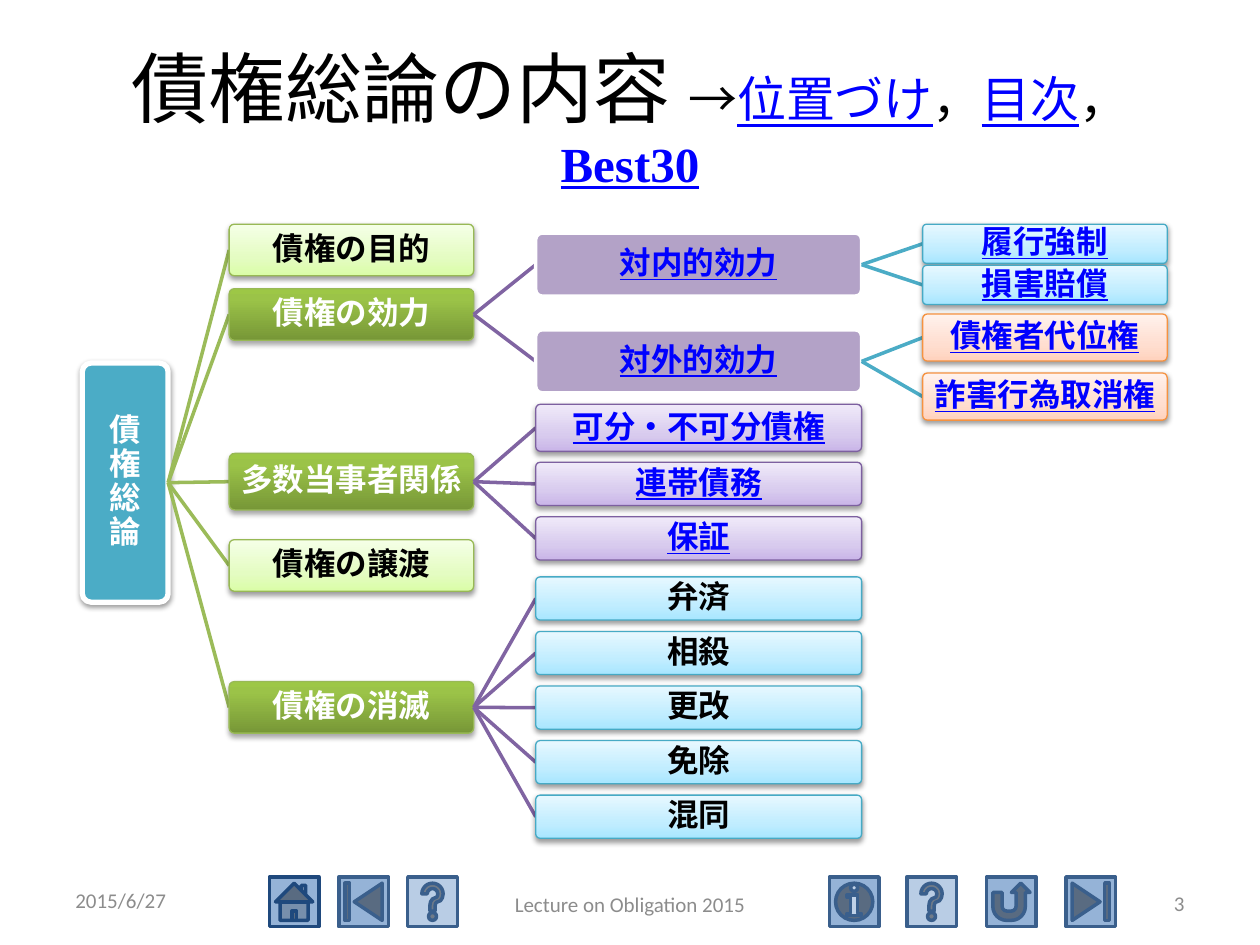
from copy import deepcopy
from dataclasses import dataclass
from typing import Optional

from lxml.etree import SubElement
from pptx import Presentation
from pptx.dml.color import RGBColor
from pptx.enum.shapes import MSO_CONNECTOR, MSO_SHAPE
from pptx.enum.text import MSO_ANCHOR, PP_ALIGN
from pptx.oxml.ns import qn
from pptx.util import Cm, Pt

COLORS = {
    "black": "000000", "white": "FFFFFF", "link": "0000FF", "footer": "8C8C8C",
    "teal": "4BACC6", "green": "9BBB59", "purple": "8064A2", "lilac": "B3A2C7",
    "green edge": "98B955", "blue edge": "46AAC5",
    "orange edge": "F69240", "purple edge": "7D60A0",
    "button": "95B3D7", "help": "B9CDE5", "button edge": "3A5F8C", "home edge": "1F497D",
}


@dataclass(frozen=True)
class Style:
    fill: str | tuple[tuple[float, str], ...]
    edge: str
    edge_width: float = 0.75
    text: str = "link"
    shadow: Optional[tuple[int, float]] = (38, 1.6)


@dataclass(frozen=True)
class Column:
    left: float
    width: float
    branch: str


@dataclass(frozen=True)
class Node:
    label: str
    style: Style
    top: float
    height: float
    children: tuple["Node", ...] = ()


@dataclass(frozen=True)
class Button:
    kind: MSO_SHAPE
    left: float
    fill: str = "button"
    edge: str = "button edge"


@dataclass(frozen=True)
class Footer:
    text: str
    left: float
    top: float
    width: float
    align: PP_ALIGN


@dataclass(frozen=True)
class TitlePart:
    text: str
    size: int = 28
    linked: bool = False
    font: str = "Calibri"
    bold: bool = False


PALE_GREEN = ((0, "DAFDA7"), (0.35, "E4FCC2"), (1, "F5FFE7"))
DEEP_GREEN = ((0, "779737"), (0.8, "9BC348"), (1, "9DC746"))
PALE_BLUE = ((0, "A7E6FF"), (0.35, "C1EDFF"), (1, "E7F8FF"))
PALE_ORANGE = ((0, "FFD2BD"), (0.35, "FFDED0"), (1, "FFF2ED"))
PALE_PURPLE = ((0, "C9B5E8"), (0.35, "D8CBEE"), (1, "F0EAF9"))

ROOT = Style("teal", "white", 3, "white")
TOPIC = Style(PALE_GREEN, "green edge", text="black")
BRANCH = Style(DEEP_GREEN, "green edge", text="white", shadow=(35, 1.8))
EFFECT = Style("lilac", "white", 2, shadow=None)
INTERNAL = Style(PALE_BLUE, "blue edge")
EXTERNAL = Style(PALE_ORANGE, "orange edge")
PARTIES = Style(PALE_PURPLE, "purple edge")
EXTINCTION = Style(PALE_BLUE, "blue edge", text="black")

COLUMNS = (
    Column(1.66, 1.73, "green"),
    Column(4.62, 4.93, "purple"),
    Column(10.8, 6.57, "teal"),
    Column(18.6, 4.93, "teal"),
)

TREE = Node("債\v権\v総\v論", ROOT, 7.32, 4.82, (
    Node("債権の目的", TOPIC, 4.52, 1.04),
    Node("債権の効力", BRANCH, 5.82, 1.04, (
        Node("対内的効力", EFFECT, 4.7, 1.27, (
            Node("履行強制", INTERNAL, 4.52, 0.79),
            Node("損害賠償", INTERNAL, 5.35, 0.79),
        )),
        Node("対外的効力", EFFECT, 6.65, 1.27, (
            Node("債権者代位権", EXTERNAL, 6.33, 0.95),
            Node("詐害行為取消権", EXTERNAL, 7.52, 0.95),
        )),
    )),
    Node("多数当事者関係", BRANCH, 9.14, 1.14, (
        Node("可分・不可分債権", PARTIES, 8.15, 0.95),
        Node("連帯債務", PARTIES, 9.32, 0.87),
        Node("保証", PARTIES, 10.42, 0.87),
    )),
    Node("債権の譲渡", TOPIC, 10.88, 1.04),
    Node("債権の消滅", BRANCH, 13.74, 1.04, tuple(
        Node(label, EXTINCTION, 11.63 + index * 1.1, 0.87)
        for index, label in enumerate(("弁済", "相殺", "更改", "免除", "混同"))
    )),
))

BUTTONS = (
    Button(MSO_SHAPE.ACTION_BUTTON_HOME, 5.43, edge="home edge"),
    Button(MSO_SHAPE.ACTION_BUTTON_BEGINNING, 6.83),
    Button(MSO_SHAPE.ACTION_BUTTON_HELP, 8.22, "help"),
    Button(MSO_SHAPE.ACTION_BUTTON_INFORMATION, 16.72),
    Button(MSO_SHAPE.ACTION_BUTTON_HELP, 18.28, "help"),
    Button(MSO_SHAPE.ACTION_BUTTON_RETURN, 19.89),
    Button(MSO_SHAPE.ACTION_BUTTON_END, 21.49),
)

FOOTERS = (
    Footer("2015/6/27", 1.27, 17.65, 5.93, PP_ALIGN.LEFT),
    Footer("Lecture on Obligation 2015", 8.68, 17.73, 8.04, PP_ALIGN.CENTER),
    Footer("3", 18.2, 17.71, 5.93, PP_ALIGN.RIGHT),
)

TITLE = (
    TitlePart("債権総論の内容 ", 44),
    TitlePart("→"),
    TitlePart("位置づけ", linked=True),
    TitlePart("，"),
    TitlePart("目次", linked=True),
    TitlePart("， "),
    TitlePart("Best30", linked=True, font="Times New Roman", bold=True),
)


def color(name: str) -> RGBColor:
    return RGBColor.from_string(COLORS[name])


def fill_shape(shape, fill: str | tuple[tuple[float, str], ...]) -> None:
    if isinstance(fill, str):
        shape.fill.solid()
        shape.fill.fore_color.rgb = color(fill)
        return
    shape.fill.gradient()
    shape.fill.gradient_angle = 90
    stop_list = shape._element.spPr.find(".//" + qn("a:gsLst"))
    stop_list.append(deepcopy(stop_list[-1]))
    for stop, (position, value) in zip(shape.fill.gradient_stops, fill):
        stop.position = position
        stop.color.rgb = RGBColor.from_string(value)


def add_shadow(shape, opacity: int, distance: float) -> None:
    effects = shape._element.spPr.find(qn("a:effectLst"))
    shadow = SubElement(effects, qn("a:outerShdw"), blurRad=str(Pt(3.1)),
                        dist=str(Pt(distance)), dir="5400000", rotWithShape="0")
    shade = SubElement(shadow, qn("a:srgbClr"), val=COLORS["black"])
    SubElement(shade, qn("a:alpha"), val=str(opacity * 1000))


def add_box(slide, kind: MSO_SHAPE, left: float, top: float, width: float, height: float,
            fill: str | tuple[tuple[float, str], ...], edge: str, edge_width: float):
    shape = slide.shapes.add_shape(kind, Cm(left), Cm(top), Cm(width), Cm(height))
    shape.shadow.inherit = False
    fill_shape(shape, fill)
    shape.line.color.rgb = color(edge)
    shape.line.width = Pt(edge_width)
    return shape


def add_branch(slide, parent: Node, child: Node, depth: int) -> None:
    start, end = COLUMNS[depth], COLUMNS[depth + 1]
    connector = slide.shapes.add_connector(
        MSO_CONNECTOR.STRAIGHT,
        Cm(start.left + start.width), Cm(parent.top + parent.height / 2),
        Cm(end.left), Cm(child.top + child.height / 2))
    connector.line.color.rgb = color(start.branch)
    connector.line.width = Pt(2)
    SubElement(connector._element.spPr, qn("a:effectLst"))


def add_node(slide, node: Node, depth: int = 0) -> None:
    column, style = COLUMNS[depth], node.style
    shape = add_box(slide, MSO_SHAPE.ROUNDED_RECTANGLE, column.left, node.top,
                    column.width, node.height, style.fill, style.edge, style.edge_width)
    shape.adjustments[0] = 0.1
    if style.shadow:
        add_shadow(shape, *style.shadow)
    frame = shape.text_frame
    frame.margin_left = frame.margin_right = frame.margin_top = frame.margin_bottom = Cm(0.03)
    frame.vertical_anchor = MSO_ANCHOR.MIDDLE
    frame.text = node.label
    paragraph = frame.paragraphs[0]
    paragraph.alignment = PP_ALIGN.CENTER
    paragraph.line_spacing = 0.9
    set_font(paragraph.font, 18, style.text, bold=True, underline=style.text == "link")
    for child in node.children:
        add_branch(slide, node, child, depth)
        add_node(slide, child, depth + 1)


def set_font(font, size: int, color_name: str, name: str = "Calibri",
             bold: bool = False, underline: bool = False) -> None:
    font.name, font.size, font.bold, font.underline = name, Pt(size), bold, underline
    font.color.rgb = color(color_name)


def add_text(slide, left: float, top: float, width: float, height: float, align: PP_ALIGN):
    frame = slide.shapes.add_textbox(Cm(left), Cm(top), Cm(width), Cm(height)).text_frame
    frame.word_wrap = True
    frame.vertical_anchor = MSO_ANCHOR.MIDDLE
    paragraph = frame.paragraphs[0]
    paragraph.alignment = align
    return paragraph


def main() -> None:
    presentation = Presentation()
    presentation.slide_width, presentation.slide_height = Cm(25.4), Cm(19.05)
    slide = presentation.slides.add_slide(presentation.slide_layouts[6])
    for button in BUTTONS:
        add_box(slide, button.kind, button.left, 17.68, 1, 1, button.fill, button.edge, 2)
    title = add_text(slide, 1.27, 0.76, 22.86, 3.18, PP_ALIGN.CENTER)
    for part in TITLE:
        run = title.add_run()
        run.text = part.text
        set_font(run.font, part.size, "link" if part.linked else "black",
                 part.font, part.bold, part.linked)
    for footer in FOOTERS:
        paragraph = add_text(slide, footer.left, footer.top, footer.width, 1.01, footer.align)
        paragraph.add_run().text = footer.text
        set_font(paragraph.font, 12, "footer")
    add_node(slide, TREE)
    presentation.save("out.pptx")


if __name__ == "__main__":
    main()
